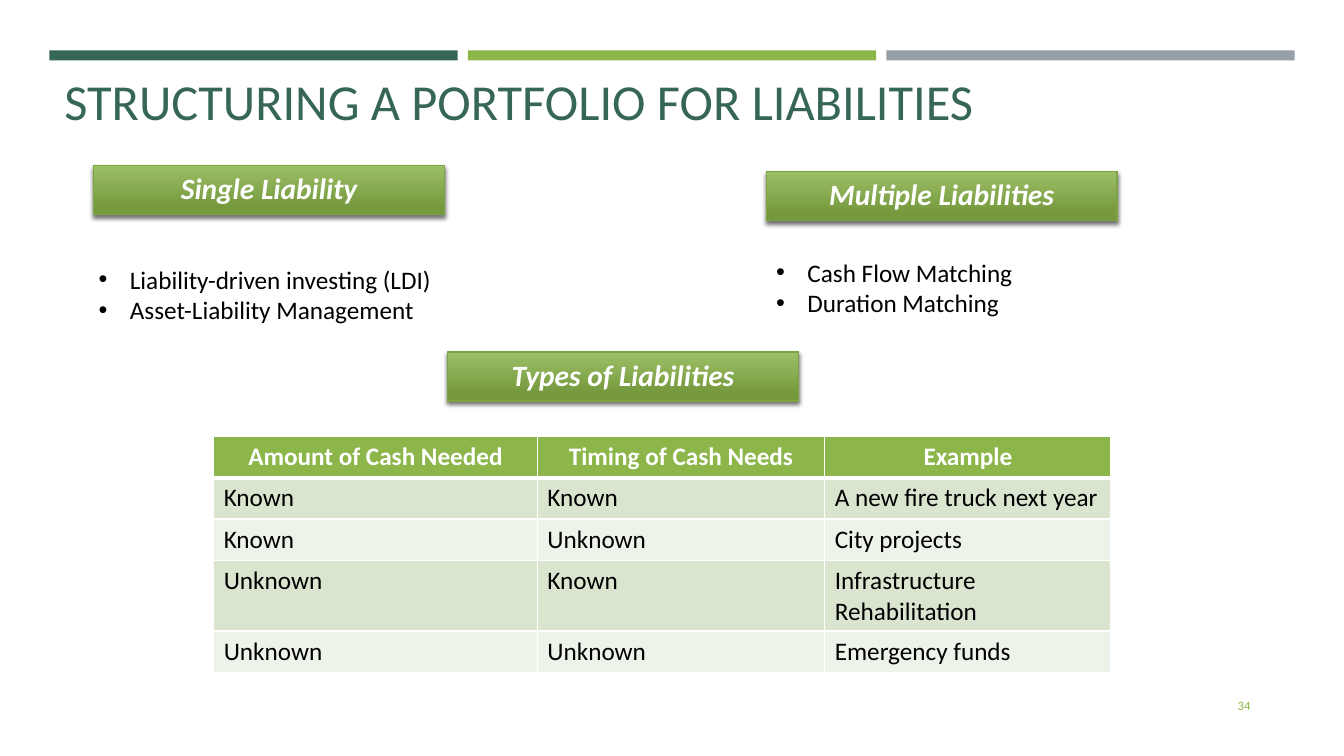
import pptx
import pptx.dml.color
import pptx.enum.shapes
import pptx.enum.text
import pptx.oxml
import pptx.oxml.ns
import pptx.util
from lxml import etree

Inches, Pt = pptx.util.Inches, pptx.util.Pt
ALIGN = pptx.enum.text.PP_ALIGN
ANCHOR = pptx.enum.text.MSO_ANCHOR
RECT = pptx.enum.shapes.MSO_SHAPE.RECTANGLE

COLORS = {
    "dark": "366658", "green": "8CB64A", "gray": "969FA7",
    "label_top": "9CC067", "label_bottom": "76993E", "label_line": "7EA442",
    "band": "DAE5D0", "band_light": "EEF3E9", "white": "FFFFFF", "black": "000000",
}
TITLE = {"size": Pt(36)}
BODY = {"size": Pt(18)}
HEADER = {"size": Pt(18), "bold": True}
LABEL = {"size": Pt(21), "bold": True, "italic": True}
NUMBER = {"size": Pt(9)}

TABLE_ROWS = [
    ("Amount of Cash Needed", "Timing of Cash Needs", "Example"),
    ("Known", "Known", "A new fire truck next year"),
    ("Known", "Unknown", "City projects"),
    ("Unknown", "Known", "Infrastructure Rehabilitation"),
    ("Unknown", "Unknown", "Emergency funds"),
]


def rgb(name):
    return pptx.dml.color.RGBColor.from_string(COLORS[name])


def write(p, text, color, font, align=ALIGN.LEFT):
    p.alignment = align
    r = p.add_run()
    r.text = text
    r.font.name = "Calibri"
    r.font.color.rgb = rgb(color)
    for key, value in font.items():
        setattr(r.font, key, value)


def add_text_box(s, x, y, w, h, anchor=ANCHOR.TOP):
    tf = s.shapes.add_textbox(Inches(x), Inches(y), Inches(w), Inches(h)).text_frame
    tf.word_wrap = True
    tf.vertical_anchor = anchor
    return tf


def add_rect(s, x, y, w, h):
    sp = s.shapes.add_shape(RECT, Inches(x), Inches(y), Inches(w), Inches(h))
    sp.shadow.inherit = False
    return sp


def add_top_bars(s, x, y, w, h, gap=0.1):
    bar_w = (w - 2 * gap) / 3
    for i, color in enumerate(("dark", "green", "gray")):
        sp = add_rect(s, x + i * (bar_w + gap), y, bar_w, h)
        sp.fill.solid()
        sp.fill.fore_color.rgb = rgb(color)
        sp.line.fill.background()


def add_title(s, x, y, w, h, text):
    tf = add_text_box(s, x, y, w, h, ANCHOR.BOTTOM)
    tf.margin_top = tf.margin_bottom = 0
    write(tf.paragraphs[0], text, "dark", TITLE)


def add_drop_shadow(sp):
    effects = sp._element.spPr.find(pptx.oxml.ns.qn("a:effectLst"))
    effects.append(pptx.oxml.parse_xml(
        f'<a:outerShdw {pptx.oxml.ns.nsdecls("a")} blurRad="{Pt(3)}" dist="{Pt(2)}" '
        'dir="5400000" algn="ctr" rotWithShape="0">'
        f'<a:srgbClr val="{COLORS["black"]}"><a:alpha val="55000"/></a:srgbClr>'
        '</a:outerShdw>'))


def add_label(s, x, y, text, w=3.48, h=0.49):
    """Gradient heading box with a soft shadow below it."""
    sp = add_rect(s, x, y, w, h)
    sp.fill.gradient()
    sp.fill.gradient_angle = 270
    stops = (("label_top", 0), ("label_bottom", 0.84))
    for stop, (color, position) in zip(sp.fill.gradient_stops, stops):
        stop.color.rgb = rgb(color)
        stop.position = position
    sp.line.color.rgb = rgb("label_line")
    sp.line.width = Pt(1)
    add_drop_shadow(sp)
    tf = sp.text_frame
    tf.vertical_anchor = ANCHOR.MIDDLE
    p = tf.paragraphs[0]
    p.line_spacing = 0.9
    p.space_before = Pt(7.5)
    write(p, text, "white", LABEL, ALIGN.CENTER)


def add_bullets(s, x, y, w, h, items, indent=0.31):
    tf = add_text_box(s, x, y, w, h)
    for i, item in enumerate(items):
        p = tf.add_paragraph() if i else tf.paragraphs[0]
        write(p, item, "black", BODY)
        pPr = p._p.get_or_add_pPr()
        pPr.set("marL", str(Inches(indent)))
        pPr.set("indent", str(-Inches(indent)))
        etree.SubElement(pPr, pptx.oxml.ns.qn("a:buFont"), typeface="Arial")
        etree.SubElement(pPr, pptx.oxml.ns.qn("a:buChar"), char="•")


def set_borders(cell, bottom):
    tcPr = cell._tc.get_or_add_tcPr()
    widths = {"lnL": 1, "lnR": 1, "lnT": 1, "lnB": bottom}
    for i, (side, width) in enumerate(widths.items()):
        tcPr.insert(i, pptx.oxml.parse_xml(
            f'<a:{side} {pptx.oxml.ns.nsdecls("a")} w="{Pt(width)}"><a:solidFill>'
            f'<a:srgbClr val="{COLORS["white"]}"/></a:solidFill></a:{side}>'))


def add_liability_table(s, x, y, col_widths, row_h=0.41):
    table = s.shapes.add_table(
        len(TABLE_ROWS), len(col_widths), Inches(x), Inches(y),
        Inches(sum(col_widths)), Inches(row_h * len(TABLE_ROWS))).table
    for col, width in zip(table.columns, col_widths):
        col.width = Inches(width)
    for i, texts in enumerate(TABLE_ROWS):
        table.rows[i].height = Inches(row_h)
        if i == 0:
            fill, look = "green", ("white", HEADER, ALIGN.CENTER)
        else:
            fill = "band" if i % 2 else "band_light"
            look = ("black", BODY, ALIGN.LEFT)
        for j, text in enumerate(texts):
            cell = table.cell(i, j)
            cell.fill.solid()
            cell.fill.fore_color.rgb = rgb(fill)
            write(cell.text_frame.paragraphs[0], text, *look)
            set_borders(cell, bottom=1 if i else 3)


def add_slide_number(s, x, y, w, h, number):
    tf = add_text_box(s, x, y, w, h, ANCHOR.MIDDLE)
    write(tf.paragraphs[0], number, "green", NUMBER, ALIGN.RIGHT)


def main():
    prs = pptx.Presentation()
    prs.slide_width, prs.slide_height = Inches(13.33), Inches(7.5)
    s = prs.slides.add_slide(prs.slide_layouts[6])
    add_top_bars(s, 0.49, 0.5, 12.35, 0.1)
    add_title(s, 0.54, 0.7, 12.06, 0.6, "STRUCTURING A PORTFOLIO FOR LIABILITIES")
    add_bullets(s, 0.88, 2.57, 4.52, 0.71,
                ["Liability-driven investing (LDI)", "Asset-Liability Management"])
    add_bullets(s, 7.6, 2.5, 4.52, 0.71, ["Cash Flow Matching", "Duration Matching"])
    add_label(s, 0.93, 1.64, "Single Liability")
    add_label(s, 7.6, 1.7, "Multiple Liabilities")
    add_label(s, 4.44, 3.49, "Types of Liabilities")
    add_liability_table(s, 2.12, 4.33, [3.21, 2.85, 2.84])
    add_slide_number(s, 11.35, 6.8, 1.15, 0.4, "34")
    prs.save("out.pptx")


if __name__ == "__main__":
    main()
